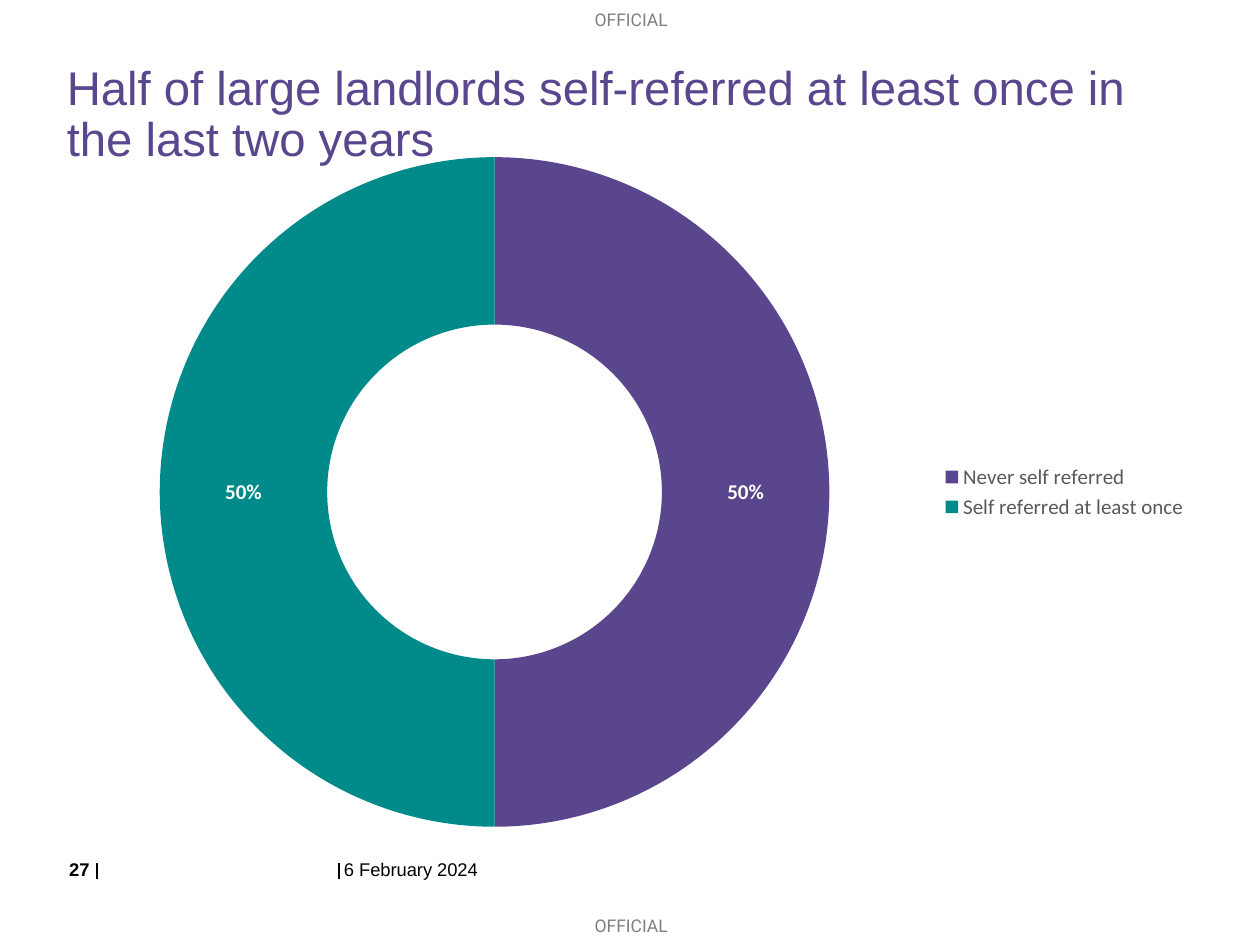
"""Build a slide with a doughnut chart of landlord self-referrals."""
from lxml import etree
from pptx import Presentation
from pptx import util as u
from pptx.chart.data import CategoryChartData
from pptx.dml.color import RGBColor
from pptx.enum import chart as charts, shapes, text
from pptx.oxml.ns import qn

PURPLE = RGBColor(0x59, 0x46, 0x8D)
TEAL = RGBColor(0x00, 0x8A, 0x89)
BLACK = RGBColor(0x00, 0x00, 0x00)
WHITE = RGBColor(0xFF, 0xFF, 0xFF)
MID_GREY = RGBColor(0x7F, 0x7F, 0x7F)
DARK_GREY = RGBColor(0x59, 0x59, 0x59)


def set_font(font, name, size, color, bold=False):
    font.name = name
    font.size = u.Pt(size)
    font.bold = bold
    font.color.rgb = color


def fill_text(shape, words, name, size, color, bold=False, align=text.PP_ALIGN.LEFT):
    frame = shape.text_frame
    frame.margin_left = frame.margin_right = frame.margin_top = frame.margin_bottom = 0
    frame.word_wrap = True
    frame.auto_size = text.MSO_AUTO_SIZE.NONE
    frame.vertical_anchor = text.MSO_ANCHOR.TOP
    paragraph = frame.paragraphs[0]
    paragraph.alignment = align
    run = paragraph.add_run()
    run.text = words
    set_font(run.font, name, size, color, bold)
    return paragraph


presentation = Presentation()
presentation.slide_width = u.Inches(10)
presentation.slide_height = u.Inches(7.5)
slide = presentation.slides.add_slide(presentation.slide_layouts[5])

for x in (0.77, 2.69):
    divider = slide.shapes.add_connector(
        shapes.MSO_CONNECTOR.STRAIGHT, u.Inches(x), u.Inches(6.98), u.Inches(x), u.Inches(6.85))
    divider.line.color.rgb = BLACK
    divider.line.width = u.Pt(0.75)
    etree.SubElement(divider._element.spPr, qn("a:effectLst"))

for y in (7.26, 0.07):
    marking = slide.shapes.add_textbox(u.Inches(4.72), u.Inches(y), u.Inches(0.6), u.Inches(0.17))
    fill_text(marking, "OFFICIAL", "Roboto", 10, MID_GREY)
    marking.text_frame.word_wrap = False

title = slide.shapes.title
title.left, title.top = u.Inches(0.53), u.Inches(0.51)
title.width, title.height = u.Inches(8.87), u.Inches(0.79)
heading = fill_text(
    title, "Half of large landlords self-referred at least once in the last two years",
    "Arial", 27, PURPLE)
heading.line_spacing = 0.9

chart_data = CategoryChartData()
chart_data.categories = ["Never self referred", "Self referred at least once"]
chart_data.add_series("Series 1", (50, 50))
chart = slide.shapes.add_chart(
    charts.XL_CHART_TYPE.DOUGHNUT, u.Inches(0.4), u.Inches(1.11),
    u.Inches(9.13), u.Inches(5.59), chart_data).chart
set_font(chart.font, "Calibri", 10, BLACK)
chart.has_title = False
chart.has_legend = True
chart.legend.position = charts.XL_LEGEND_POSITION.RIGHT
chart.legend.include_in_layout = False
set_font(chart.legend.font, "Calibri", 12, DARK_GREY)

plot = chart.plots[0]
plot.vary_by_categories = True
series = plot.series[0]
for index, color in enumerate((PURPLE, TEAL)):
    point = series.points[index]
    point.format.fill.solid()
    point.format.fill.fore_color.rgb = color
    point.format.line.fill.background()
labels = series.data_labels
labels.show_percentage = True
labels.show_value = False
labels.number_format = "0%"
labels.number_format_is_linked = False
set_font(labels.font, "Calibri", 12, WHITE, True)

date = slide.shapes.add_textbox(u.Inches(2.73), u.Inches(6.81), u.Inches(2.35), u.Inches(0.12))
fill_text(date, "6 February 2024", "Arial", 10.5, BLACK)
number = slide.shapes.add_textbox(u.Inches(0.53), u.Inches(6.81), u.Inches(0.2), u.Inches(0.12))
fill_text(number, "27", "Arial", 10.5, BLACK, True, text.PP_ALIGN.CENTER)

presentation.save("out.pptx")
